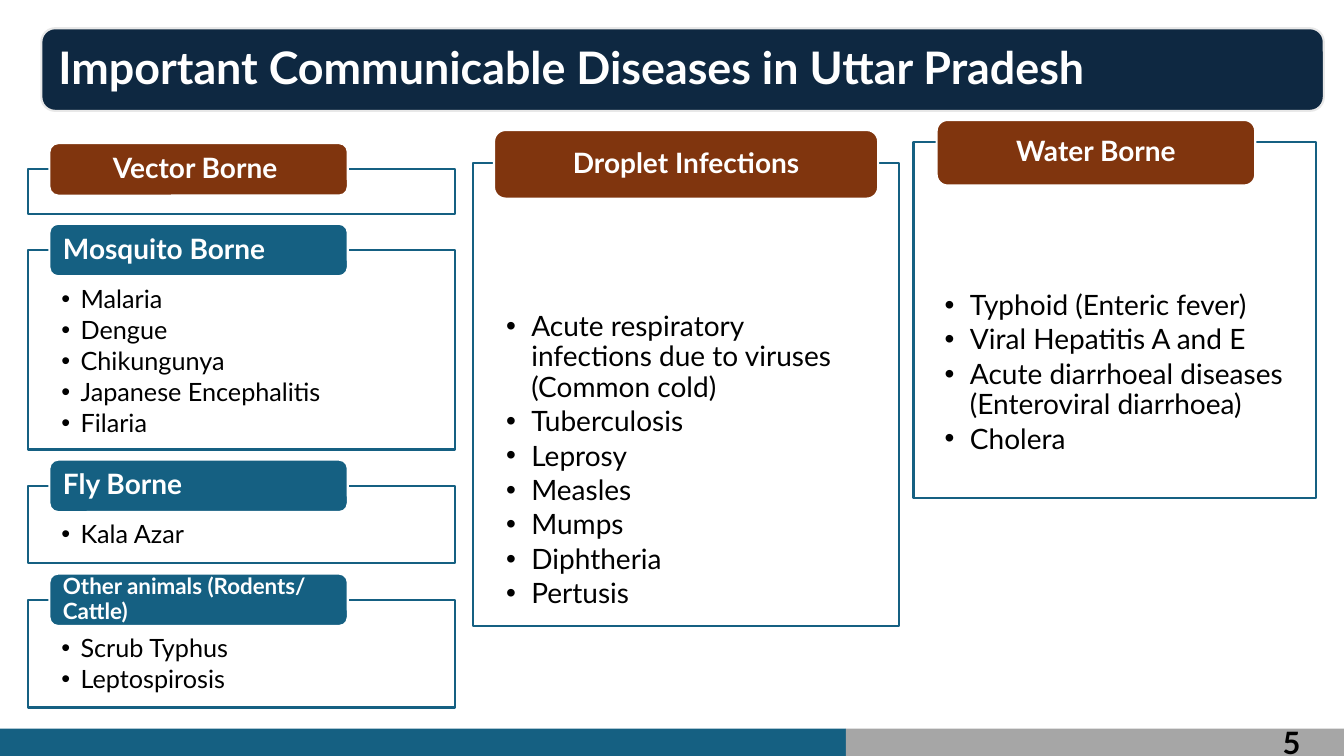
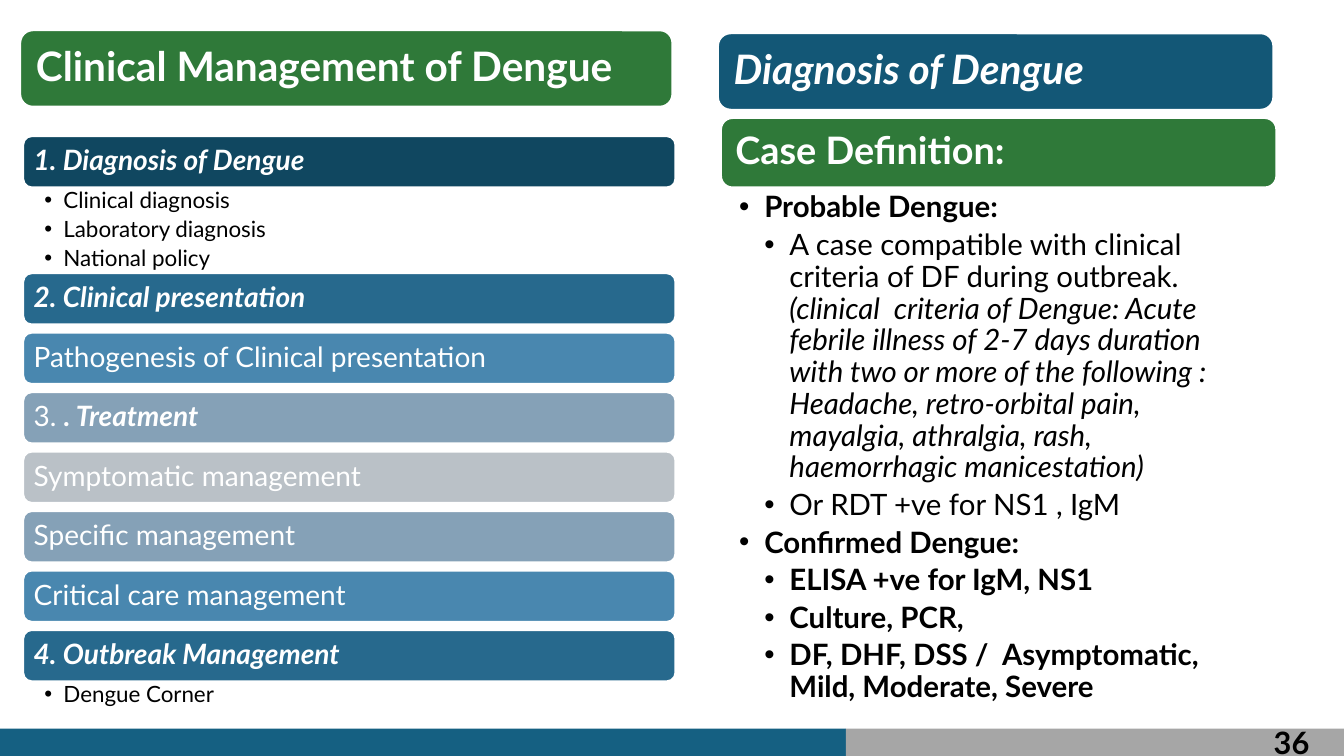
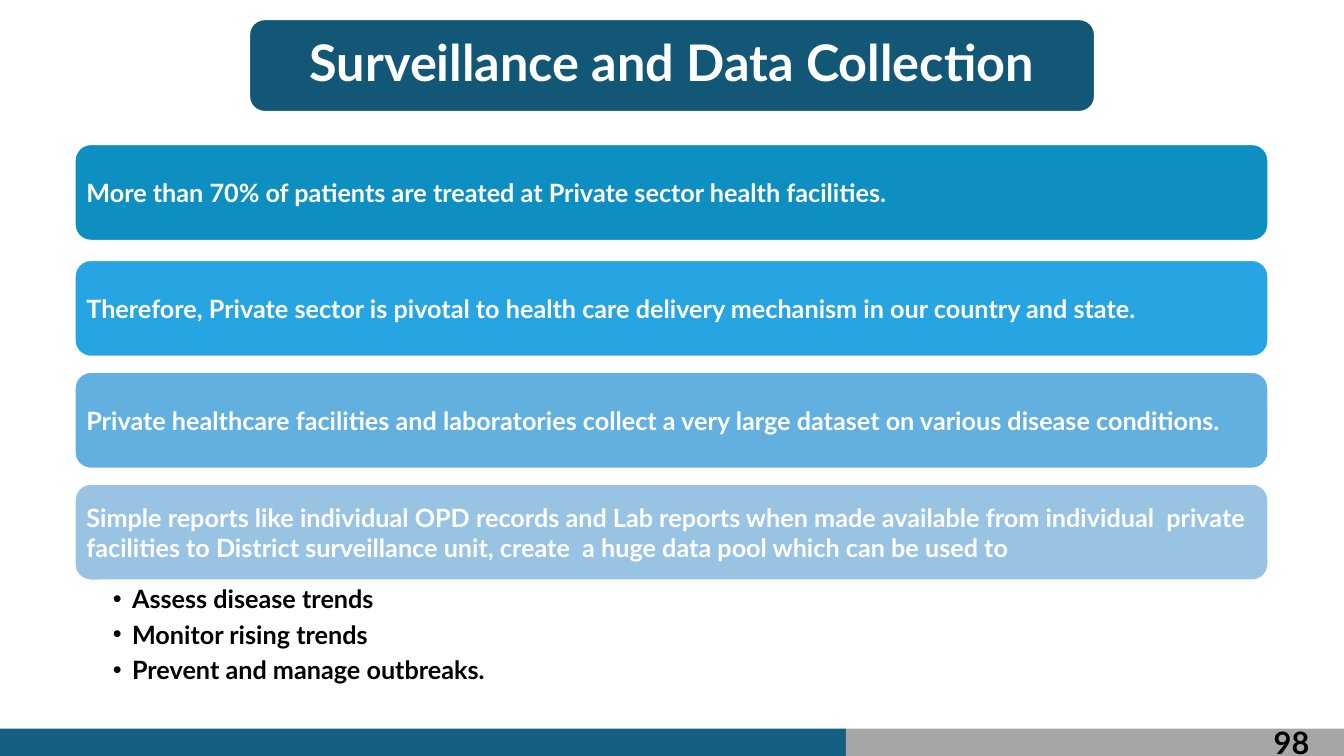
from dataclasses import dataclass

from lxml import etree
from pptx import Presentation
from pptx.dml.color import RGBColor
from pptx.enum.shapes import MSO_SHAPE
from pptx.enum.text import MSO_ANCHOR, PP_ALIGN
from pptx.oxml.ns import qn
from pptx.util import Emu, Pt

RECT, ROUND = MSO_SHAPE.RECTANGLE, MSO_SHAPE.ROUNDED_RECTANGLE
TOP, MIDDLE = MSO_ANCHOR.TOP, MSO_ANCHOR.MIDDLE
LEFT, CENTER = PP_ALIGN.LEFT, PP_ALIGN.CENTER
PX = 9144


@dataclass(frozen=True)
class Theme:
    """Colours, font and type sizes of the deck."""
    font: str = "Lato"
    white: str = "FFFFFF"
    black: str = "000000"
    teal: str = "156082"
    grey: str = "A6A6A6"
    navy: str = "0E2841"
    edge: str = "E8E8E8"
    brown: str = "80350E"
    green: str = "196B24"
    petrol: str = "135776"
    steps: tuple = ("104760", "27698D", "4987AF", "85A1B7", "BAC1C7")
    blues: tuple = ("0E8FC1", "26A5E2", "61B0DF", "98C3E2")
    line: float = 1.5
    hero: int = 36
    title: int = 32
    heading: int = 29
    subheading: int = 27
    number: int = 22
    case: int = 21
    body: int = 20
    item: int = 18
    small: int = 16


T = Theme()


def px(n):
    """Turn px into EMU."""
    return Emu(n * PX)


def rgb(c):
    """Turn a hex string into a colour."""
    return RGBColor.from_string(c)


def frame(sp, ins, anchor):
    """Set insets, wrap and anchor, and return the text frame."""
    tf = sp.text_frame
    tf.word_wrap = True
    tf.vertical_anchor = anchor
    tf.margin_left, tf.margin_top, tf.margin_right, tf.margin_bottom = map(px, ins)
    return tf


def add_runs(p, runs, size, color, align=LEFT, spacing=0.9):
    """Fill a paragraph with (text, style) runs, where style may hold b and i."""
    p.alignment = align
    p.line_spacing = spacing
    for text, style in runs:
        r = p.add_run()
        r.text = text
        f = r.font
        f.name, f.size, f.color.rgb = T.font, Pt(size), rgb(color)
        f.bold, f.italic = "b" in style, "i" in style


def add_bullets(tf, items, size, indent, after, spacing=0.9):
    """Write bulleted paragraphs from (level, runs) items."""
    for n, (level, runs) in enumerate(items):
        p = tf.paragraphs[0] if n == 0 else tf.add_paragraph()
        p.level = level
        pPr = p._p.get_or_add_pPr()
        pPr.set("marL", str(px(indent * level)))
        pPr.set("indent", str(px(-indent)))
        etree.SubElement(pPr, qn("a:buFont")).set("typeface", "Arial")
        etree.SubElement(pPr, qn("a:buChar")).set("char", "•")
        p.space_after = Pt(round(size * after, 1))
        add_runs(p, runs, size, T.black, spacing=spacing)


def block(s, box, fill, kind=ROUND, line=T.white, alpha=100):
    """Draw a filled shape, without outline when line is None."""
    sp = s.shapes.add_shape(kind, *map(px, box))
    sp.shadow.inherit = False
    sp.fill.solid()
    sp.fill.fore_color.rgb = rgb(fill)
    if alpha < 100:
        clr = sp._element.spPr.find(".//" + qn("a:srgbClr"))
        etree.SubElement(clr, qn("a:alpha")).set("val", str(alpha * 1000))
    if line:
        sp.line.color.rgb = rgb(line)
        sp.line.width = Pt(T.line)
    else:
        sp.line.fill.background()
    return sp


def bar(s, box, runs, size, fill, ins, align=LEFT, spacing=0.9, **look):
    """Draw a rounded bar with a white label."""
    tf = frame(block(s, box, fill, **look), ins, MIDDLE)
    add_runs(tf.paragraphs[0], runs, size, T.white, align, spacing)


def text_box(s, box, ins):
    """Add a top-anchored text box and return its text frame."""
    return frame(s.shapes.add_textbox(*map(px, box)), ins, TOP)


def plain(*texts, style=""):
    """Make first-level bullet items of one run each."""
    return [(1, [(t, style)]) for t in texts]


def new_slide(prs, number):
    """Add a blank slide with the footer bands and its number."""
    s = prs.slides.add_slide(prs.slide_layouts[6])
    block(s, (0, 723, 839, 27), T.teal, RECT, None)
    block(s, (839, 723, 495, 27), T.grey, RECT, None)
    tf = text_box(s, (1206, 717, 150, 59), (10, 5, 10, 5))
    add_runs(tf.paragraphs[0], [(str(number), "b")], T.number, T.black, CENTER)
    return s


def panel(s, box, tag, label, items, main=True, pad=(33, 36, 33, 14),
          size=T.item, indent=19, label_size=T.body):
    """Draw an outlined list with a tag placed relative to its corner."""
    x, y = box[:2]
    dx, dy, w, h = tag
    sp = block(s, box, T.white, RECT, T.teal)
    if items:
        add_bullets(frame(sp, pad, TOP), plain(*items), size, indent, 0.15)
    bar(s, (x + dx, y + dy, w, h), [(label, "b")], label_size,
        T.brown if main else T.teal, (11, 0, 11, 0), CENTER if main else LEFT)


def vector_column(s, x, y, w):
    """Stack the vector-borne panels with equal gaps."""
    gap = 36
    groups = [
        (44, "Vector Borne ", [], T.body),
        (198, "Mosquito Borne",
         ["Malaria", "Dengue", "Chikungunya", "Japanese Encephalitis", "Filaria"], T.body),
        (77, "Fly Borne", ["Kala Azar"], T.body),
        (107, "Other animals (Rodents/ Cattle)", ["Scrub Typhus", "Leptospirosis"], T.small),
    ]
    for h, label, items, label_size in groups:
        panel(s, (x, y, w, h), (21, -26, 296, 52), label, items,
              main=not items, label_size=label_size)
        y += h + gap


def bar_stack(s, box, bars, size, pad, list_size, list_pad, row, spacing=0.9, style=""):
    """Draw bars at offsets (top, runs, fill, bullets), each with its bullets below."""
    x, y, w, h = box
    for top, runs, fill, bullets in bars:
        bar(s, (x, y + top, w, h), runs, size, fill, (pad,) * 4, spacing=spacing)
        if bullets:
            tf = text_box(s, (x, y + top + h, w, row * len(bullets)), list_pad)
            add_bullets(tf, plain(*bullets, style=style), list_size, 19, 0.2, spacing)


def case_definition(s, x, y, w):
    """Draw the case definition heading and its two-level list."""
    h = 69
    bar(s, (x, y, w, h), [("Case Definition:", "b")], T.subheading, T.green,
        (11,) * 4, alpha=90)
    items = [
        (1, [("Probable Dengue:", "b")]),
        (2, [("A case compatible with clinical criteria of DF during outbreak. ", ""),
             ("(clinical  criteria of Dengue: Acute febrile illness of 2-7 days duration "
              "with two or more of the following : Headache, retro-orbital pain, mayalgia, "
              "athralgia, rash, haemorrhagic manicestation)", "i")]),
        (2, [("Or RDT +ve for NS1 , IgM", "")]),
        (1, [("Confirmed Dengue:", "b")]),
        (2, [("ELISA +ve for IgM, NS1", "b")]),
        (2, [("Culture, PCR,", "b")]),
        (2, [("DF, DHF, DSS /  Asymptomatic, Mild, Moderate, Severe", "b")]),
    ]
    tf = text_box(s, (x, y + h + 1, w, 501), (18, 4, 21, 4))
    add_bullets(tf, items, T.case, 25, 0.2)


def diseases_slide(prs):
    """Build the slide on communicable diseases."""
    s = new_slide(prs, 5)
    bar(s, (41, 28, 1272, 82), [("Important Communicable Diseases in Uttar Pradesh", "b")],
        T.title, T.navy, (13,) * 4, line=T.edge)
    vector_column(s, 28, 168, 423)
    panel(s, (906, 141, 399, 353), (23, -22, 316, 65), "Water Borne",
          ["Typhoid (Enteric fever)", "Viral Hepatitis A and E",
           "Acute diarrhoeal diseases (Enteroviral diarrhoea)", "Cholera"],
          pad=(31, 148, 31, 16), size=T.body, indent=25)
    panel(s, (469, 162, 423, 459), (21, -33, 381, 68), "Droplet Infections",
          ["Acute respiratory infections due to viruses (Common cold)", "Tuberculosis",
           "Leprosy", "Measles", "Mumps", "Diphtheria", "Pertusis"],
          pad=(33, 148, 33, 16), size=T.body, indent=25)


def dengue_slide(prs):
    """Build the slide on clinical management of dengue."""
    s = new_slide(prs, 36)
    bar(s, (20, 30, 647, 76), [("Clinical Management of Dengue", "b")],
        T.heading, T.green, (12,) * 4, alpha=90)
    steps = [
        ([("2. Clinical presentation", "bi")], 1, []),
        ([("Pathogenesis of Clinical presentation", "")], 2, []),
        ([("3. ", ""), (". Treatment", "bi")], 3, []),
        ([("Symptomatic management", "")], 4, []),
        ([("Specific management", "")], 3, []),
        ([("Critical care management", "")], 2, []),
        ([("4. Outbreak Management", "bi")], 1, ["Dengue Corner"]),
    ]
    bars = [(0, [("1. Diagnosis of Dengue", "bi")], T.steps[0],
             ["Clinical diagnosis", "Laboratory diagnosis", "National policy"])]
    bars += [(136 + 59 * n, runs, T.steps[shade], bullets)
             for n, (runs, shade, bullets) in enumerate(steps)]
    bar_stack(s, (23, 135, 647, 51), bars, T.body, 8, T.small, (21, 2, 12, 2), 28)
    bar(s, (712, 33, 551, 76), [("Diagnosis of Dengue", "bi")],
        T.heading, T.petrol, (12,) * 4)
    case_definition(s, 715, 117, 551)


def surveillance_slide(prs):
    """Build the slide on surveillance and data collection."""
    s = new_slide(prs, 98)
    bar(s, (247, 19, 839, 92), [("Surveillance and Data Collection", "b")],
        T.hero, T.petrol, (15,) * 4, CENTER)
    points = [
        (0, "More than 70% of patients are treated at Private sector health facilities.", []),
        (115, "Therefore, Private sector is pivotal to health care delivery mechanism "
              "in our country and state.", []),
        (226, "Private healthcare facilities and laboratories collect a very large dataset "
              "on various disease conditions.", []),
        (337, "Simple reports like individual OPD records and Lab reports when made available "
              "from individual  private facilities to District surveillance unit, create  "
              "a huge data pool which can be used to",
         ["Assess disease trends", "Monitor rising trends", "Prevent and manage outbreaks."]),
    ]
    bars = [(top, [(text, "b")], fill, bullets)
            for (top, text, bullets), fill in zip(points, T.blues)]
    bar_stack(s, (74, 143, 1184, 96), bars, T.item, 7, T.item, (38, 3, 14, 3), 35, 1.0, "b")


def main():
    """Build and save the deck."""
    prs = Presentation()
    prs.slide_width, prs.slide_height = px(1333), px(750)
    diseases_slide(prs)
    dengue_slide(prs)
    surveillance_slide(prs)
    prs.save("out.pptx")


if __name__ == "__main__":
    main()
